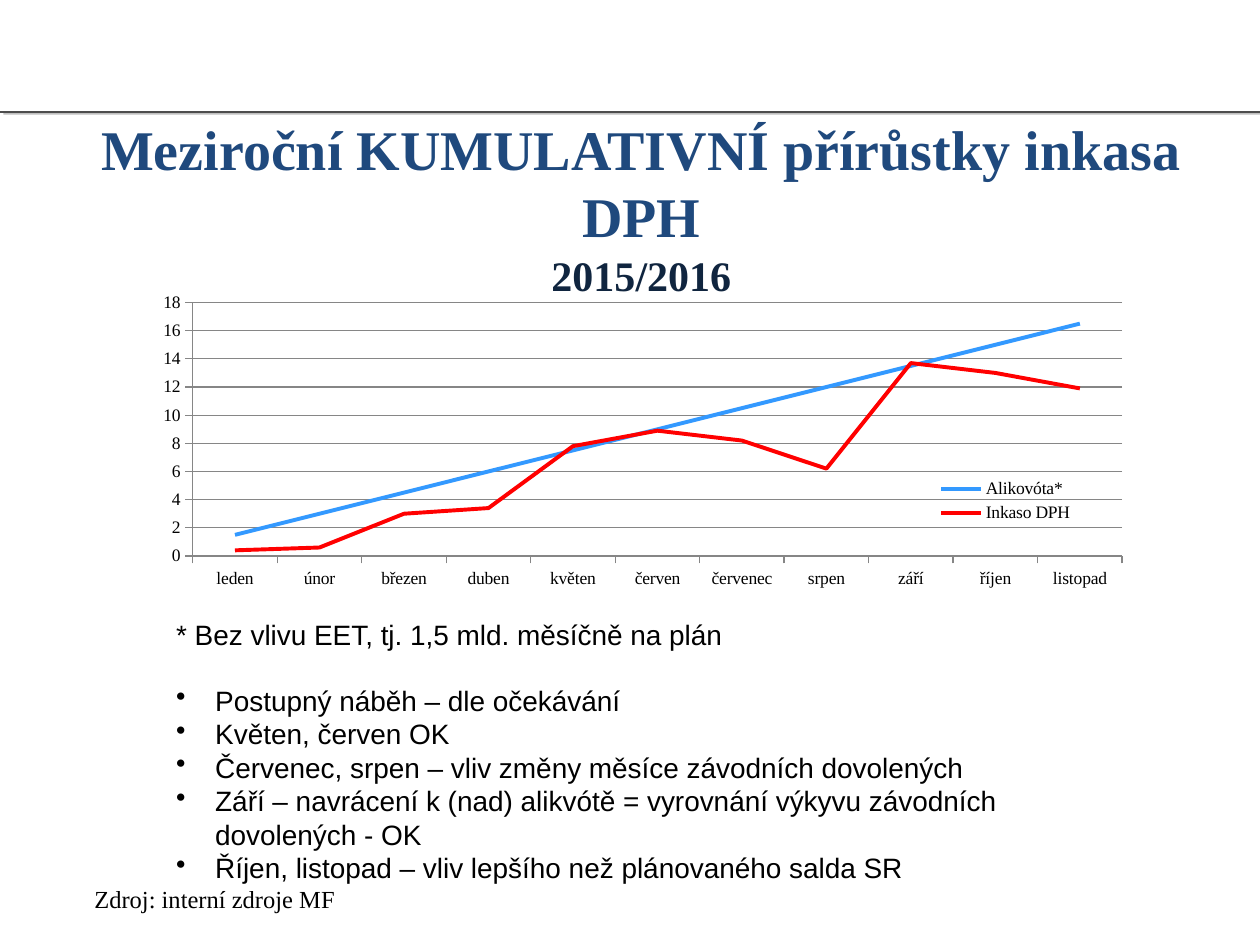
import pptx
import pptx.chart.data
import pptx.dml.color
import pptx.enum.chart
import pptx.enum.shapes
import pptx.enum.text
import pptx.oxml
import pptx.oxml.ns
import pptx.util

Inches, Pt = pptx.util.Inches, pptx.util.Pt
SERIF, SANS = "Times New Roman", "Arial"

# Content
TITLE = "Meziroční KUMULATIVNÍ přírůstky inkasa DPH"
YEARS = "2015/2016"
SOURCE = "Zdroj: interní zdroje MF"
FOOTNOTE = "* Bez vlivu EET, tj. 1,5 mld. měsíčně na plán"
COMMENTS = [
    "Postupný náběh – dle očekávání",
    "Květen, červen OK",
    "Červenec, srpen – vliv změny měsíce závodních dovolených",
    "Září – navrácení k (nad) alikvótě = vyrovnání výkyvu závodních dovolených - OK",
    "Říjen, listopad – vliv lepšího než plánovaného salda SR",
]
MONTHS = ["leden", "únor", "březen", "duben", "květen", "červen",
          "červenec", "srpen", "září", "říjen", "listopad"]
MONTHLY_QUOTA = 1.5
SERIES = [
    ("Alikovóta*", [MONTHLY_QUOTA * (i + 1) for i in range(len(MONTHS))], "3399FF"),
    ("Inkaso DPH", [0.4, 0.6, 3, 3.4, 7.8, 8.9, 8.2, 6.2, 13.7, 13, 11.9], "FF0000"),
]


def rgb(value):
    return pptx.dml.color.RGBColor.from_string(value)


def element(tag, body, prefix):
    return pptx.oxml.parse_xml(
        f"<{prefix}:{tag} {pptx.oxml.ns.nsdecls(prefix)}>{body}</{prefix}:{tag}>")


def layout(x, y, w, h, inner=False):
    target = '<c:layoutTarget val="inner"/>' if inner else ""
    modes = '<c:xMode val="edge"/><c:yMode val="edge"/>'
    sizes = "".join(f'<c:{k} val="{v}"/>' for k, v in zip("xywh", (x, y, w, h)))
    return element("layout", f"<c:manualLayout>{target}{modes}{sizes}</c:manualLayout>", "c")


def add_text_box(left, top, width, height):
    frame = slide.shapes.add_textbox(*map(Inches, (left, top, width, height))).text_frame
    frame.word_wrap = True
    return frame


def add_run(paragraph, text, font, size, color="000000", bold=False):
    run = paragraph.add_run()
    run.text = text
    run.font.name, run.font.size, run.font.bold = font, Pt(size), bold
    run.font.color.rgb = rgb(color)


deck = pptx.Presentation()
deck.slide_width, deck.slide_height = Inches(10), Inches(7.5)
slide = deck.slides.add_slide(deck.slide_layouts[6])

# Header rule with its shadow
rule = slide.shapes.add_connector(pptx.enum.shapes.MSO_CONNECTOR.STRAIGHT,
                                  0, Inches(0.89), Inches(10), Inches(0.89))
rule.line.color.rgb = rgb("4D4D4D")
rule.line.width = Pt(1)
rule_properties = rule._element.spPr
rule_properties.append(element(
    "effectLst",
    f'<a:outerShdw dist="{Pt(2.2)}" dir="{27 * 60000}"><a:srgbClr val="808080">'
    '<a:alpha val="50000"/></a:srgbClr></a:outerShdw>', "a"))

# Title
title = add_text_box(0.59, 1.31, 9, 0.87)
title.vertical_anchor = pptx.enum.text.MSO_ANCHOR.MIDDLE
title.margin_bottom = Inches(0.25)
heading = title.paragraphs[0]
heading.alignment = pptx.enum.text.PP_ALIGN.CENTER
add_run(heading, TITLE, SERIF, 32, "1F497D", True)
heading.add_line_break()
add_run(heading, YEARS, SERIF, 24, "10253F", True)

# Source line
add_run(add_text_box(0.65, 6.97, 2.31, 0.34).paragraphs[0], SOURCE, SERIF, 14)

# Line chart
revenue = pptx.chart.data.CategoryChartData()
revenue.categories = MONTHS
for name, values, _ in SERIES:
    revenue.add_series(name, values)
chart = slide.shapes.add_chart(
    pptx.enum.chart.XL_CHART_TYPE.LINE, Inches(0.91), Inches(2.25),
    Inches(8.27), Inches(2.76), revenue).chart
chart.has_title = False
chart.font.name, chart.font.size = SERIF, Pt(10)
chart.font.color.rgb = rgb("000000")
chart.plots[0].vary_by_categories = False
for line, (_, _, color) in zip(chart.plots[0].series, SERIES):
    line.smooth = False
    line.marker.style = pptx.enum.chart.XL_MARKER_STYLE.NONE
    line.format.line.color.rgb = rgb(color)
    line.format.line.width = Pt(2.25)

# Axes
months_axis, amount_axis = chart.category_axis, chart.value_axis
amount_axis.minimum_scale, amount_axis.maximum_scale = 0, 18
amount_axis.major_unit = 2
amount_axis.has_major_gridlines = True
for axis in (months_axis, amount_axis):
    axis.major_tick_mark = pptx.enum.chart.XL_TICK_MARK.OUTSIDE
for stroke in (months_axis.format.line, amount_axis.format.line,
               amount_axis.major_gridlines.format.line):
    stroke.color.rgb = rgb("868686")
    stroke.width = Pt(0.75)

# Plot and legend places
plot_area = chart.plots[0]._element.getparent()
for old in plot_area.findall(pptx.oxml.ns.qn("c:layout")):
    plot_area.remove(old)
plot_area.insert(0, layout(0.075, 0.055, 0.892, 0.729, inner=True))
chart.has_legend = True
legend = chart.legend
legend.position = pptx.enum.chart.XL_LEGEND_POSITION.RIGHT
legend.include_in_layout = False
for old in legend._element.findall(pptx.oxml.ns.qn("c:layout")):
    legend._element.remove(old)
legend._element.find(pptx.oxml.ns.qn("c:legendPos")).addnext(layout(0.78, 0.55, 0.15, 0.15))

# Footnote and comments
notes = add_text_box(1.3, 4.85, 7.8, 2.79)
add_run(notes.paragraphs[0], FOOTNOTE, SANS, 16)
for index, comment in enumerate(COMMENTS):
    paragraph = notes.add_paragraph()
    properties = paragraph._p.get_or_add_pPr()
    properties.set("marL", str(Inches(0.31)))
    properties.set("indent", str(Inches(-0.31)))
    bullet = pptx.oxml.parse_xml(f'<a:buChar {pptx.oxml.ns.nsdecls("a")} char="•"/>')
    properties.append(bullet)
    if index == 0:
        paragraph.space_before = Pt(18.4)
    add_run(paragraph, comment, SANS, 16)

deck.save("out.pptx")
